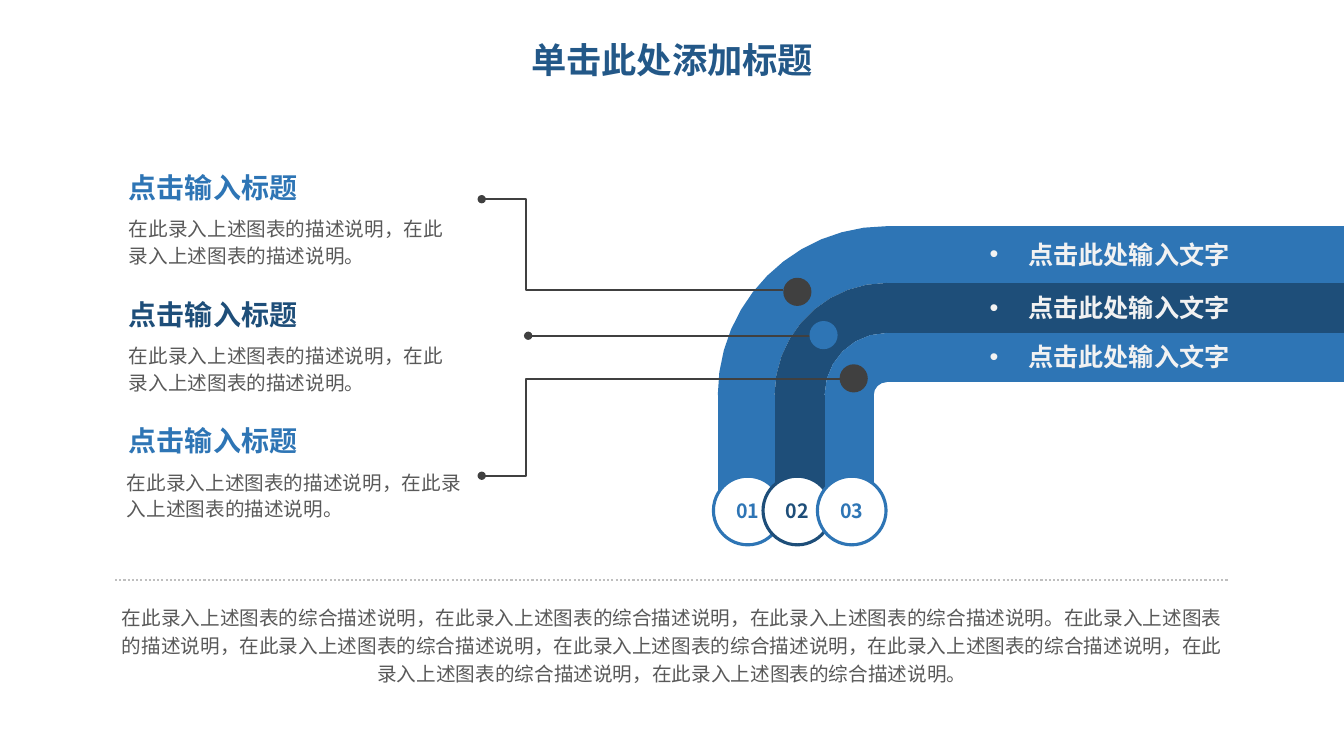
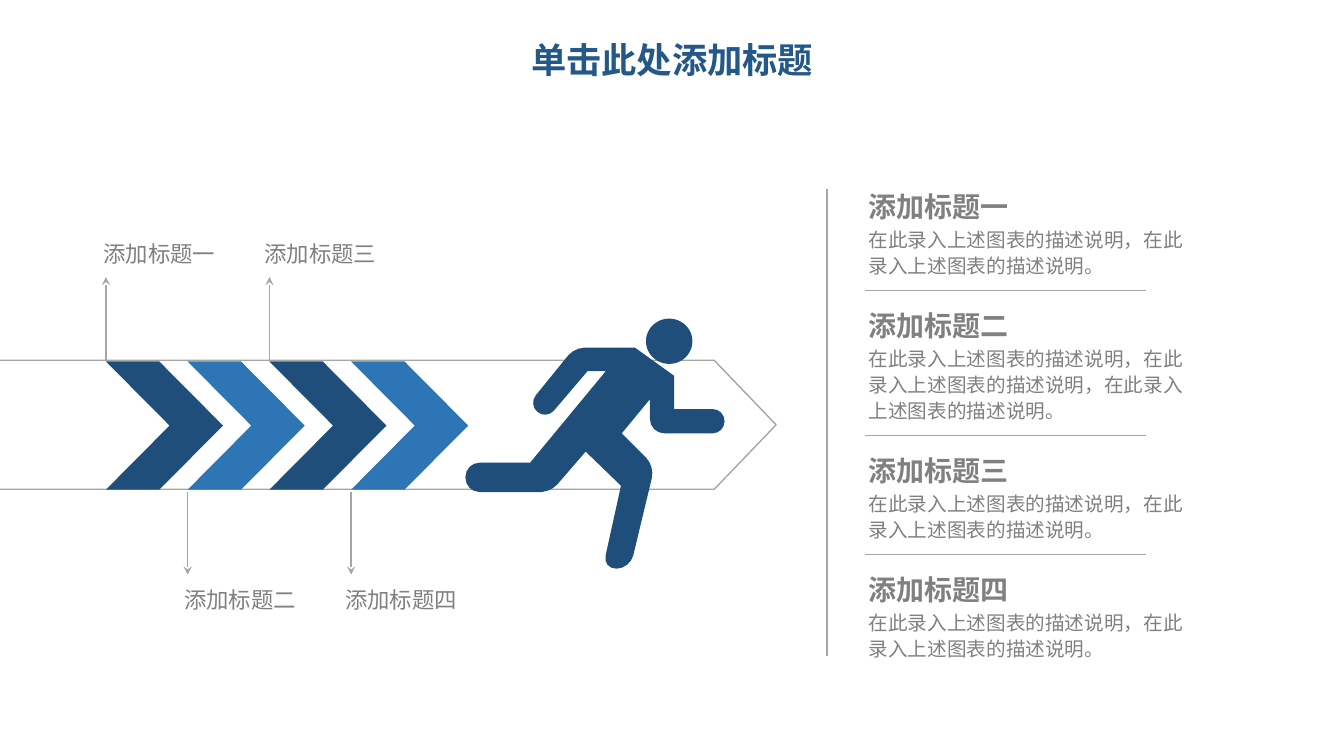
from dataclasses import dataclass
from typing import NamedTuple

from lxml import etree
from pptx import Presentation
from pptx.dml.color import RGBColor
from pptx.enum.dml import MSO_LINE
from pptx.enum.shapes import MSO_CONNECTOR, MSO_SHAPE
from pptx.enum.text import MSO_ANCHOR, PP_ALIGN
from pptx.oxml.ns import qn
from pptx.shapes.autoshape import Shape
from pptx.slide import Slide
from pptx.util import Cm, Pt

STRAIGHT, ELBOW = MSO_CONNECTOR.STRAIGHT, MSO_CONNECTOR.ELBOW
OVAL, CHEVRON, PENTAGON = MSO_SHAPE.OVAL, MSO_SHAPE.CHEVRON, MSO_SHAPE.PENTAGON
LEFT, CENTER = PP_ALIGN.LEFT, PP_ALIGN.CENTER
TOP, MIDDLE = MSO_ANCHOR.TOP, MSO_ANCHOR.MIDDLE
DOTTED = MSO_LINE.ROUND_DOT

SLIDE_W, SLIDE_H = 33.87, 19.05
CIRCLE_PULL = 0.5523


@dataclass(frozen=True)
class Theme:
    title: str = "235888"
    blue: str = "2E75B5"
    navy: str = "1E4E79"
    dark: str = "404040"
    body: str = "595959"
    gray: str = "808080"
    rule: str = "A6A6A6"
    dots: str = "BFBFBF"
    pale: str = "F2F2F2"
    white: str = "FFFFFF"
    title_font: str = "Montserrat"
    font: str = "Noto Sans CJK SC"
    title_size: float = 25.2
    heading_size: float = 20
    band_size: float = 18
    label_size: float = 16
    body_size: float = 14


THEME = Theme()


class Box(NamedTuple):
    x: float
    y: float
    w: float
    h: float


class Corner(NamedTuple):
    x: float
    y: float
    radius: float = 0


class Style(NamedTuple):
    size: float
    color: str
    bold: bool = False
    align: PP_ALIGN = LEFT
    spacing: float | None = None
    font: str = THEME.font


class Topic(NamedTuple):
    color: str
    text_x: float
    text_w: float
    badge_x: float
    band_label_y: float
    dot_x: float
    dot_color: str
    leader_start: tuple[float, float]
    leader_end: tuple[float, float]
    bend: float | None


class Entry(NamedTuple):
    heading: str
    y: float
    sentences: int


TITLE_STYLE = Style(THEME.title_size, THEME.title, True, CENTER, 0.9, THEME.title_font)

PHRASE = "在此录入上述图表的描述说明"
SUMMARY_PHRASE = "在此录入上述图表的综合描述说明"

TOPICS = (
    Topic(THEME.blue, 3, 8.66, 17.98, 5.89, 19.74, THEME.dark,
          (12.14, 5.02), (19.74, 7.31), 0.148),
    Topic(THEME.navy, 3, 8.66, 19.23, 7.24, 20.4, THEME.blue,
          (13.31, 8.46), (20.75, 8.46), None),
    Topic(THEME.blue, 2.95, 9.12, 20.6, 8.48, 21.16, THEME.dark,
          (12.14, 11.99), (21.16, 9.55), 0.125),
)
BEND_X, BEND_Y, BAND_BOTTOM = 22.35, 9.96, 12.85
BAND_RADII = (4.26, 2.83, 1.57, 0.33)

ENTRIES = (
    Entry("添加标题一", 4.65, 2),
    Entry("添加标题二", 7.65, 3),
    Entry("添加标题三", 11.3, 2),
    Entry("添加标题四", 14.3, 2),
)

RUNNER_BODY = (
    Corner(11.73, 11.66, 0.36), Corner(13.36, 11.66), Corner(15.27, 9.35),
    Corner(14.81, 9.35), Corner(13.77, 10.57, 0.29), Corner(13.32, 10.19, 0.29),
    Corner(14.48, 8.76, 0.25), Corner(16, 8.76), Corner(16.99, 9.47),
    Corner(16.99, 10.31), Corner(18.26, 10.31, 0.3), Corner(18.26, 10.92, 0.3),
    Corner(16.38, 10.92, 0.36), Corner(16.38, 10.06), Corner(15.67, 10.92),
    Corner(16.5, 11.75, 0.3), Corner(15.88, 14.33, 0.34), Corner(15.19, 14.33, 0.34),
    Corner(15.65, 12.24), Corner(14.76, 11.38), Corner(13.88, 12.4, 0.25),
    Corner(11.73, 12.4, 0.36),
)


def rgb(color: str) -> RGBColor:
    return RGBColor.from_string(color)


def write(shape: Shape, text: str, style: Style, anchor: MSO_ANCHOR = TOP,
          bullet: bool = False) -> None:
    frame = shape.text_frame
    frame.vertical_anchor = anchor
    paragraph = frame.paragraphs[0]
    paragraph.alignment = style.align
    if style.spacing:
        paragraph.line_spacing = style.spacing
    if bullet:
        properties = paragraph._p.get_or_add_pPr()
        properties.set("marL", str(Cm(0.97)))
        properties.set("indent", str(-Cm(0.97)))
        etree.SubElement(properties, qn("a:buFont")).set("typeface", "Arial")
        etree.SubElement(properties, qn("a:buChar")).set("char", "•")
    run = paragraph.add_run()
    run.text = text
    run.font.size = Pt(style.size)
    run.font.bold = style.bold
    run.font.color.rgb = rgb(style.color)
    run.font.name = style.font
    east_asian = etree.SubElement(run._r.get_or_add_rPr(), qn("a:ea"))
    east_asian.set("typeface", THEME.font)


def add_text(slide: Slide, box: Box, text: str, style: Style,
             anchor: MSO_ANCHOR = TOP, bullet: bool = False) -> None:
    area = slide.shapes.add_textbox(*map(Cm, box))
    area.text_frame.word_wrap = True
    write(area, text, style, anchor, bullet)


def paint(shape: Shape, fill: str | None, line: str | None = None, width: float = 1) -> None:
    shape.shadow.inherit = False
    if fill:
        shape.fill.solid()
        shape.fill.fore_color.rgb = rgb(fill)
    else:
        shape.fill.background()
    if line:
        shape.line.color.rgb = rgb(line)
        shape.line.width = Pt(width)
    else:
        shape.line.fill.background()


def add_preset(slide: Slide, preset: MSO_SHAPE, box: Box, fill: str | None,
               line: str | None = None, width: float = 1,
               adjustment: float | None = None) -> Shape:
    shape = slide.shapes.add_shape(preset, *map(Cm, box))
    if adjustment is not None:
        shape.adjustments[0] = adjustment
    paint(shape, fill, line, width)
    return shape


def add_line(slide: Slide, start: tuple[float, float], end: tuple[float, float],
             color: str, width: float = 1, head: str | None = None,
             bend: float | None = None, dash: MSO_LINE | None = None) -> None:
    kind = STRAIGHT if bend is None else ELBOW
    line = slide.shapes.add_connector(kind, *map(Cm, start + end))
    line.line.color.rgb = rgb(color)
    line.line.width = Pt(width)
    if dash:
        line.line.dash_style = dash
    properties = line._element.spPr
    if head:
        etree.SubElement(properties.find(qn("a:ln")), qn("a:headEnd")).set("type", head)
    if bend is not None:
        geometry = properties.find(qn("a:prstGeom"))
        guides = geometry.find(qn("a:avLst"))
        if guides is None:
            guides = etree.SubElement(geometry, qn("a:avLst"))
        guide = etree.SubElement(guides, qn("a:gd"))
        guide.set("name", "adj1")
        guide.set("fmla", f"val {round(bend * 100000)}")
    etree.SubElement(properties, qn("a:effectLst"))


def toward(start: complex, end: complex, distance: float) -> complex:
    return start + (end - start) * distance / abs(end - start)


def round_corner(before: Corner, corner: Corner, after: Corner) -> list[complex]:
    tip = complex(corner.x, corner.y)
    if not corner.radius:
        return [tip]
    start = toward(tip, complex(before.x, before.y), corner.radius)
    end = toward(tip, complex(after.x, after.y), corner.radius)
    pull_in = start + (tip - start) * CIRCLE_PULL
    pull_out = end + (tip - end) * CIRCLE_PULL
    steps = 3 + round(2 * corner.radius)
    return [
        (1 - t) ** 3 * start + 3 * (1 - t) ** 2 * t * pull_in
        + 3 * (1 - t) * t ** 2 * pull_out + t ** 3 * end
        for t in (step / steps for step in range(steps + 1))
    ]


def add_outline(slide: Slide, corners: tuple[Corner, ...], fill: str) -> None:
    following = corners[1:] + corners[:1]
    points = [
        (Cm(point.real), Cm(point.imag))
        for index, corner in enumerate(corners)
        for point in round_corner(corners[index - 1], corner, following[index])
    ]
    first, *rest = dict.fromkeys(points)
    builder = slide.shapes.build_freeform(*first, scale=1.0)
    builder.add_line_segments(rest, close=True)
    paint(builder.convert_to_shape(), fill)


def add_band(slide: Slide, outer: float, inner: float, color: str) -> None:
    outer_x, inner_x = BEND_X - outer, BEND_X - inner
    outer_y, inner_y = BEND_Y - outer, BEND_Y - inner
    leg = (Corner(outer_x, BEND_Y), Corner(inner_x, BEND_Y),
           Corner(inner_x, BAND_BOTTOM), Corner(outer_x, BAND_BOTTOM))
    curve = (Corner(outer_x, BEND_Y), Corner(outer_x, outer_y, outer),
             Corner(BEND_X, outer_y), Corner(BEND_X, inner_y),
             Corner(inner_x, inner_y, inner), Corner(inner_x, BEND_Y))
    arm = (Corner(BEND_X, outer_y), Corner(SLIDE_W, outer_y),
           Corner(SLIDE_W, inner_y), Corner(BEND_X, inner_y))
    for part in (leg, curve, arm):
        add_outline(slide, part, color)


def add_titled_slide(deck: Presentation) -> Slide:
    slide = deck.slides.add_slide(deck.slide_layouts[6])
    add_text(slide, Box(2.34, 0.91, 29.2, 1.32), "单击此处添加标题", TITLE_STYLE, MIDDLE)
    return slide


def build_bands_slide(deck: Presentation) -> None:
    slide = add_titled_slide(deck)
    for topic, outer, inner in zip(TOPICS, BAND_RADII, BAND_RADII[1:]):
        add_band(slide, outer, inner, topic.color)
    for topic in TOPICS:
        add_line(slide, topic.leader_start, topic.leader_end, THEME.dark, 1.5,
                 "oval", topic.bend)
    for index, topic in enumerate(TOPICS):
        add_preset(slide, OVAL, Box(topic.dot_x, 7 + 1.09 * index, 0.71, 0.71),
                   topic.dot_color)
        badge = add_preset(slide, OVAL, Box(topic.badge_x, 12, 1.73, 1.73),
                           THEME.white, topic.color, 2.25)
        badge.text_frame.word_wrap = False
        write(badge, f"{index + 1:02}",
              Style(THEME.body_size, topic.color, True, CENTER), MIDDLE)
        add_text(slide, Box(24.69, topic.band_label_y, 7.29, 1.02), "点击此处输入文字",
                 Style(THEME.band_size, THEME.pale, True), MIDDLE, bullet=True)
        heading_y = 4.17 + 3.19 * index
        add_text(slide, Box(3, heading_y, 7.09, 1.12), "点击输入标题",
                 Style(THEME.heading_size, topic.color, True))
        add_text(slide, Box(topic.text_x, heading_y + 1.1, topic.text_w, 1.63),
                 f"{PHRASE}，{PHRASE}。", Style(THEME.body_size, THEME.body, spacing=1.14))
    add_line(slide, (2.9, 14.62), (30.96, 14.62), THEME.dots, 1.5, dash=DOTTED)
    opening = "，".join([SUMMARY_PHRASE] * 3)
    closing = "，".join([PHRASE] + [SUMMARY_PHRASE] * 5)
    add_text(slide, Box(2.74, 15.02, 28.4, 2.41), f"{opening}。{closing}。",
             Style(THEME.body_size, THEME.body, align=CENTER, spacing=1.2))


def build_runner_slide(deck: Presentation) -> None:
    slide = add_titled_slide(deck)
    add_preset(slide, PENTAGON, Box(-0.18, 9.08, 19.74, 3.25), None, THEME.rule,
               adjustment=0.48)
    for index, entry in enumerate(ENTRIES):
        above = index % 2 == 0
        step_x = 2.67 + 2.06 * index
        add_preset(slide, CHEVRON, Box(step_x, 9.11, 2.95, 3.23),
                   THEME.navy if above else THEME.blue, adjustment=0.544)
        tip_y, base_y, label_y = (6.98, 9.09, 5.92) if above else (14.48, 12.4, 14.64)
        add_line(slide, (step_x, tip_y), (step_x, base_y), THEME.rule, head="stealth")
        add_text(slide, Box(2.36 + 2.03 * index, label_y, 3.4, 0.94), entry.heading,
                 Style(THEME.label_size, THEME.gray))
        if index:
            add_line(slide, (21.79, entry.y - 0.33), (28.88, entry.y - 0.33), THEME.rule)
        add_text(slide, Box(21.64, entry.y, 4.1, 1.12), entry.heading,
                 Style(THEME.heading_size, THEME.gray, True))
        add_text(slide, Box(21.64, entry.y + 0.91, 8.76, 0.25 + 0.66 * entry.sentences),
                 "，".join([PHRASE] * entry.sentences) + "。",
                 Style(THEME.body_size, THEME.gray, spacing=1.1))
    add_preset(slide, OVAL, Box(16.28, 8.03, 1.17, 1.14), THEME.navy)
    add_outline(slide, RUNNER_BODY, THEME.navy)
    add_line(slide, (20.84, 4.75), (20.84, 16.54), THEME.rule)


def main() -> None:
    deck = Presentation()
    deck.slide_width, deck.slide_height = Cm(SLIDE_W), Cm(SLIDE_H)
    build_bands_slide(deck)
    build_runner_slide(deck)
    deck.save("out.pptx")


if __name__ == "__main__":
    main()
